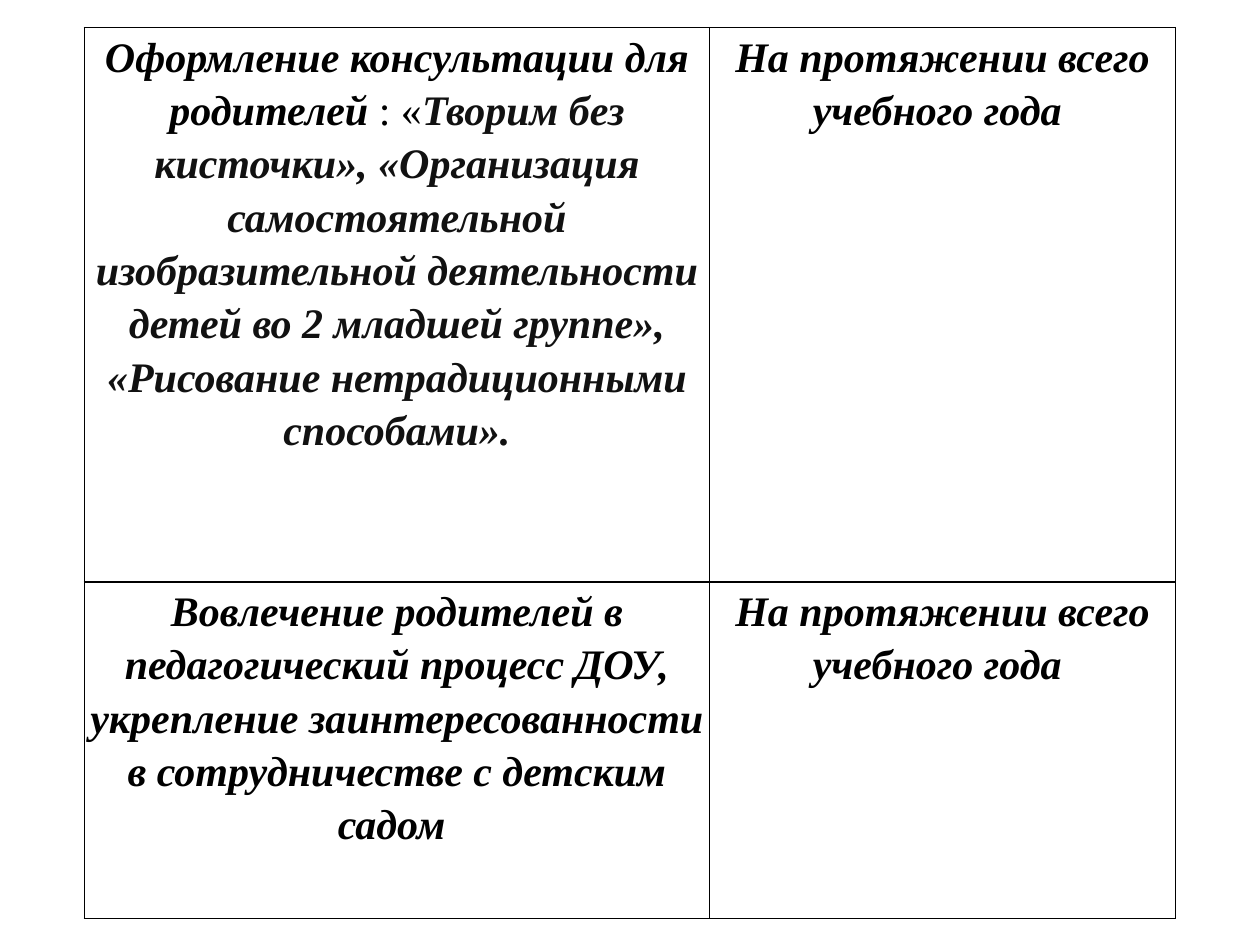
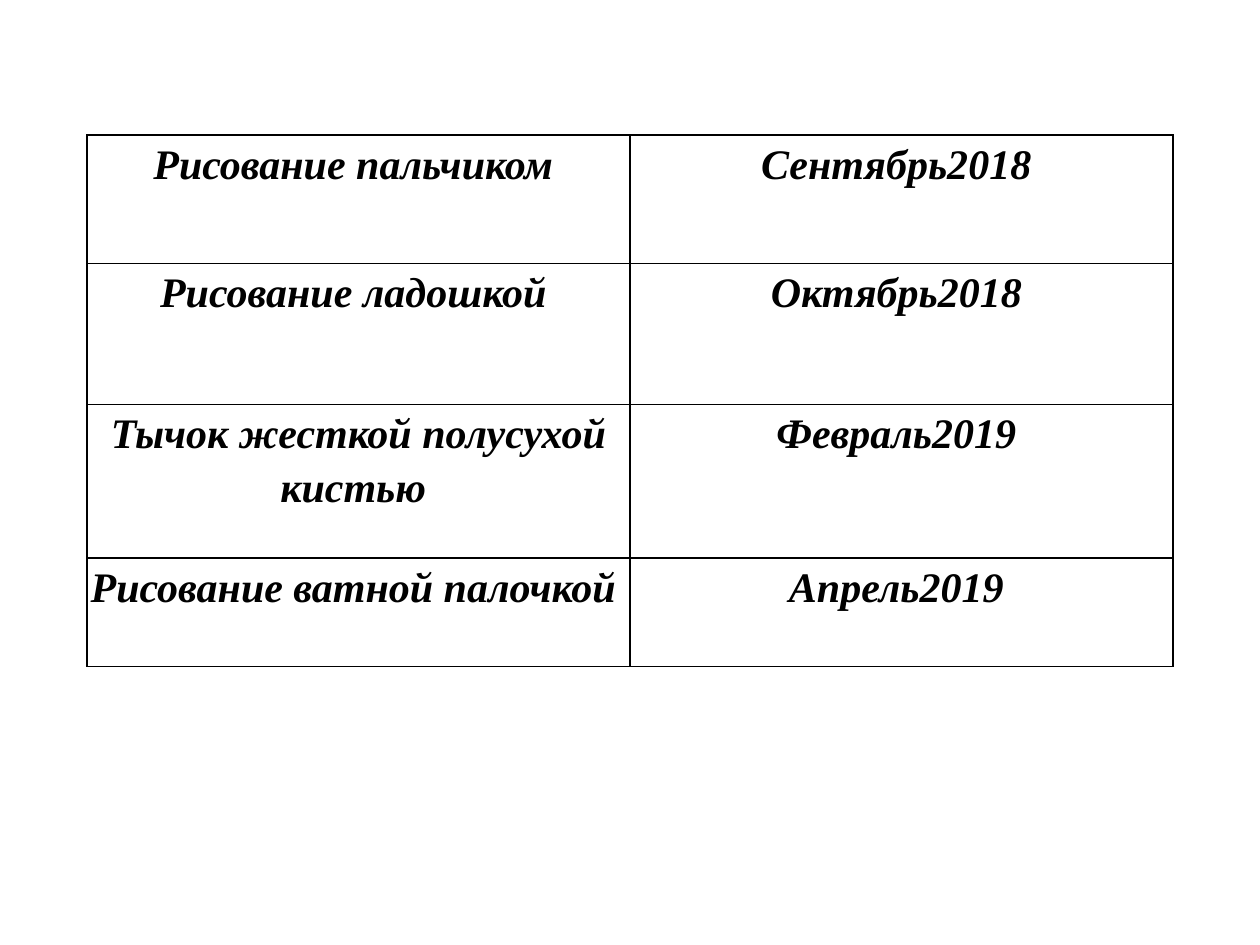
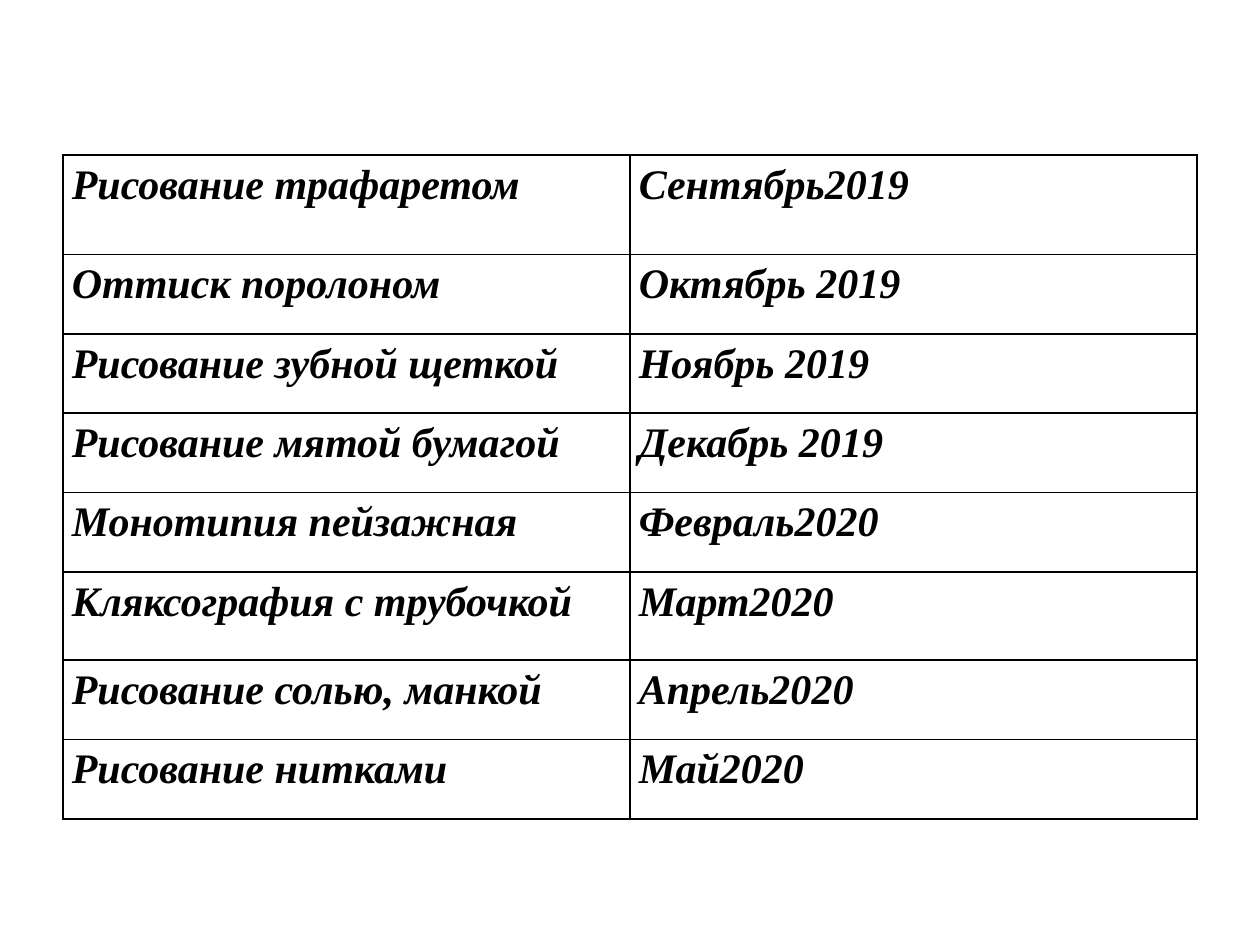
from dataclasses import dataclass

from lxml import etree
from pptx import Presentation, util as u
from pptx.dml.color import RGBColor
from pptx.enum import text
from pptx.oxml import ns


@dataclass(frozen=True)
class Theme:
    font: str = "Times New Roman"
    size: float = 24
    line_spacing: float = 1.15
    ink: str = "000000"
    soft_ink: str = "111111"
    border_width: float = 1


@dataclass(frozen=True)
class TableStyle:
    """Width, top and cell inset in inches, with column shares of the width."""
    width: float
    top: float
    inset: float
    column_shares: tuple = (0.5, 0.5)
    align: text.PP_ALIGN = text.PP_ALIGN.CENTER


@dataclass(frozen=True)
class Phrase:
    words: str
    color: str = Theme.ink
    emphasis: bool = True


THEME = Theme()
SLIDE_WIDTH, SLIDE_HEIGHT = 10, 7.5
BLANK_LAYOUT = 6
ALL_YEAR = "На протяжении всего учебного года "

PARENTS_STYLE = TableStyle(8.66, 0.22, 0.01, (4.96 / 8.66, 3.7 / 8.66))
PARENTS_ROWS = [
    (4.4, [
        Phrase("Оформление консультации для родителей"),
        Phrase(" : «", emphasis=False),
        Phrase("Творим без кисточки», «Организация самостоятельной "
               "изобразительной деятельности детей во 2 младшей группе», "
               "«Рисование нетрадиционными способами».", THEME.soft_ink),
    ], ALL_YEAR),
    (2.67, "Вовлечение родителей в педагогический процесс ДОУ, укрепление "
           "заинтересованности в сотрудничестве с детским садом ", ALL_YEAR),
]

FIRST_YEAR_STYLE = TableStyle(8.62, 1.07, 0.02)
FIRST_YEAR_ROWS = [
    (1.02, "Рисование пальчиком ", "Сентябрь2018 "),
    (1.12, "Рисование ладошкой ", "Октябрь2018 "),
    (1.22, "Тычок жесткой полусухой кистью ", "Февраль2019 "),
    (0.86, "Рисование ватной палочкой ", "Апрель2019 "),
]

SECOND_YEAR_STYLE = TableStyle(9, 1.23, 0.07, align=text.PP_ALIGN.LEFT)
SECOND_YEAR_ROWS = [
    (0.79, "Рисование трафаретом", "Сентябрь2019"),
    (0.63, "Оттиск поролоном", "Октябрь 2019"),
    (0.63, "Рисование зубной щеткой", "Ноябрь 2019"),
    (0.63, "Рисование мятой бумагой", "Декабрь 2019"),
    (0.63, "Монотипия пейзажная", "Февраль2020"),
    (0.7, "Кляксография с трубочкой", "Март2020"),
    (0.63, "Рисование солью, манкой", "Апрель2020"),
    (0.63, "Рисование нитками", "Май2020"),
]


def add_borders(cell):
    properties = cell._tc.get_or_add_tcPr()
    for side in ("lnL", "lnR", "lnT", "lnB"):
        line = etree.SubElement(properties, ns.qn(f"a:{side}"),
                                w=str(u.Pt(THEME.border_width)))
        fill = etree.SubElement(line, ns.qn("a:solidFill"))
        etree.SubElement(fill, ns.qn("a:srgbClr"), val=THEME.ink)


def write_cell(cell, content, style):
    """Fill a cell with a plain string or a list of phrases."""
    cell.margin_left = cell.margin_right = u.Inches(style.inset)
    cell.margin_top = cell.margin_bottom = 0
    add_borders(cell)
    cell.fill.background()
    paragraph = cell.text_frame.paragraphs[0]
    paragraph.alignment = style.align
    paragraph.line_spacing = THEME.line_spacing
    phrases = [Phrase(content)] if isinstance(content, str) else content
    for phrase in phrases:
        run = paragraph.add_run()
        run.text = phrase.words
        run.font.name = THEME.font
        run.font.size = u.Pt(THEME.size)
        run.font.bold = run.font.italic = phrase.emphasis
        run.font.color.rgb = RGBColor.from_string(phrase.color)


def add_plan_slide(presentation, style, rows):
    """Add a slide with one horizontally centred activity and date table."""
    slide = presentation.slides.add_slide(presentation.slide_layouts[BLANK_LAYOUT])
    left = (SLIDE_WIDTH - style.width) / 2
    height = sum(row_height for row_height, *_ in rows)
    table = slide.shapes.add_table(
        len(rows), len(style.column_shares), u.Inches(left), u.Inches(style.top),
        u.Inches(style.width), u.Inches(height)).table
    table.first_row = table.horz_banding = False
    for column, share in zip(table.columns, style.column_shares):
        column.width = u.Inches(style.width * share)
    for row, (row_height, *contents) in zip(table.rows, rows):
        row.height = u.Inches(row_height)
        for cell, content in zip(row.cells, contents):
            write_cell(cell, content, style)


def main():
    presentation = Presentation()
    presentation.slide_width = u.Inches(SLIDE_WIDTH)
    presentation.slide_height = u.Inches(SLIDE_HEIGHT)
    add_plan_slide(presentation, PARENTS_STYLE, PARENTS_ROWS)
    add_plan_slide(presentation, FIRST_YEAR_STYLE, FIRST_YEAR_ROWS)
    add_plan_slide(presentation, SECOND_YEAR_STYLE, SECOND_YEAR_ROWS)
    presentation.save("out.pptx")


if __name__ == "__main__":
    main()
